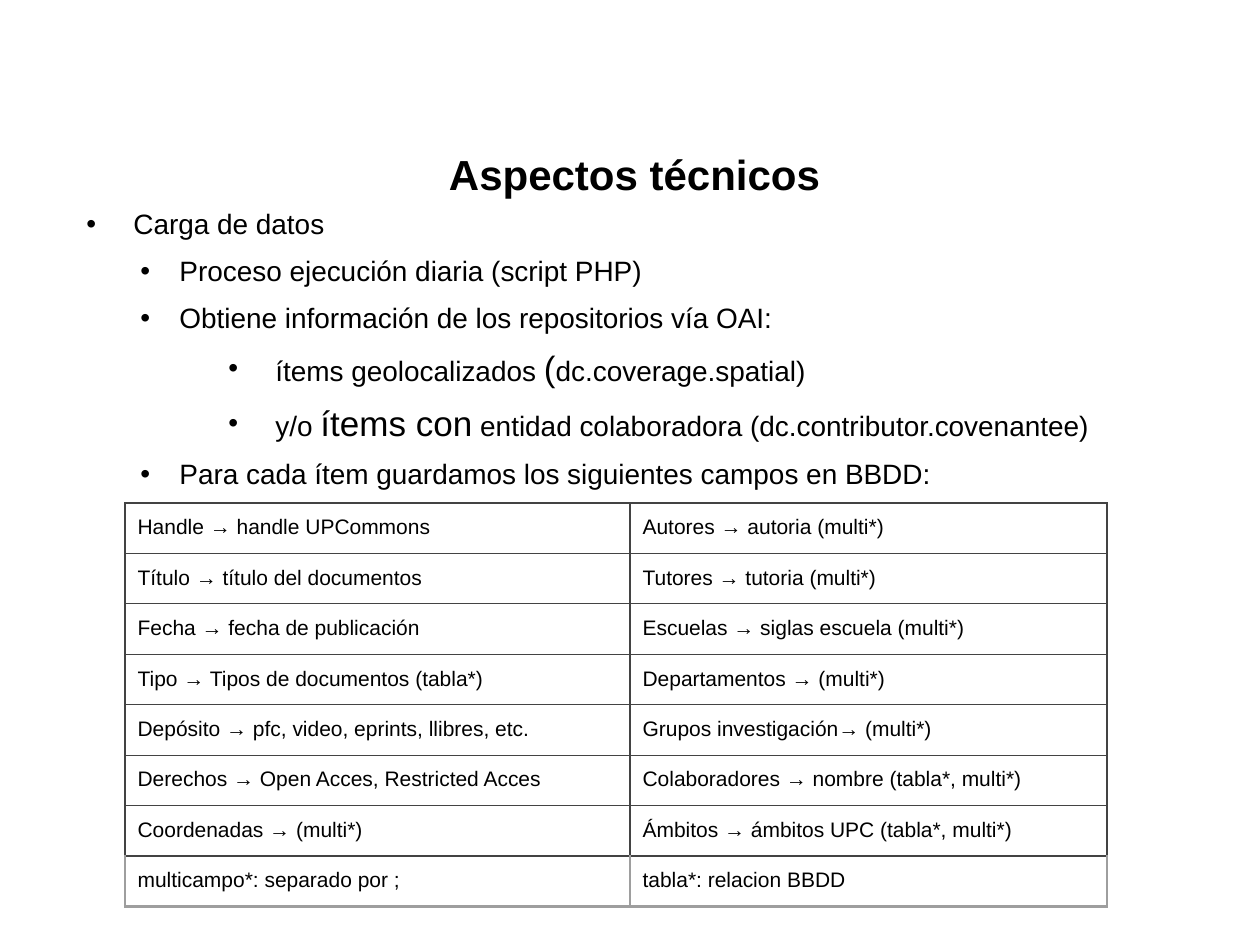
import dataclasses

import lxml.etree
import pptx
import pptx.dml.color
import pptx.enum.text
import pptx.oxml.ns
import pptx.util

ALIGN = pptx.enum.text.PP_ALIGN
ANCHOR = pptx.enum.text.MSO_ANCHOR
EMU_PER_PX = 914400 / 126


@dataclasses.dataclass(frozen=True)
class Theme:
    font: str = "Arial"
    text: str = "000000"
    border: str = "434343"
    note_border: str = "9E9E9E"
    title_size: int = 24
    emphasis_size: int = 20
    body_size: int = 16
    table_size: int = 12
    thin: float = 0.75
    thick: float = 1.5


THEME = Theme()
LEVELS = [(47, -47), (93, -39), (189, -47)]
BULLETS = [
    (0, ["Carga de datos"]),
    (1, ["Proceso ejecución diaria (script PHP)"]),
    (1, ["Obtiene información de los repositorios vía OAI:"]),
    (2, ["ítems geolocalizados ", "(", "dc.coverage.spatial)"]),
    (2, ["y/o ", "ítems con", " entidad colaboradora (dc.contributor.covenantee)"]),
    (1, ["Para cada ítem guardamos los siguientes campos en BBDD:"]),
]
FIELDS = [
    ("Handle → handle UPCommons", "Autores → autoria (multi*)"),
    ("Título → título del documentos", "Tutores → tutoria (multi*)"),
    ("Fecha → fecha de publicación", "Escuelas → siglas escuela (multi*)"),
    ("Tipo → Tipos de documentos (tabla*)", "Departamentos → (multi*)"),
    ("Depósito → pfc, video, eprints, llibres, etc.", "Grupos investigación→ (multi*)"),
    ("Derechos → Open Acces, Restricted Acces", "Colaboradores → nombre (tabla*, multi*)"),
    ("Coordenadas → (multi*)", "Ámbitos → ámbitos UPC (tabla*, multi*)"),
    ("multicampo*: separado por ;", "tabla*: relacion BBDD"),
]


def px(length):
    return pptx.util.Emu(round(length * EMU_PER_PX))


def add_element(parent, tag, **attributes):
    element = lxml.etree.SubElement(parent, pptx.oxml.ns.qn(tag))
    for name, value in attributes.items():
        element.set(name, str(value))
    return element


def add_text(paragraph, text, size, bold=False, color=THEME.text, align=None):
    if align is not None:
        paragraph.alignment = align
    run = paragraph.add_run()
    run.text = text
    run.font.name = THEME.font
    run.font.size = pptx.util.Pt(size)
    run.font.bold = bold
    run.font.color.rgb = pptx.dml.color.RGBColor.from_string(color)


class SlideBuilder:
    def __init__(self, slide, theme):
        self.slide = slide
        self.theme = theme

    def text_frame(self, left, top, width, height, anchor):
        shape = self.slide.shapes.add_textbox(px(left), px(top), px(width), px(height))
        frame = shape.text_frame
        frame.word_wrap = True
        frame.vertical_anchor = anchor
        return frame

    def title(self, text, *box):
        frame = self.text_frame(*box, ANCHOR.BOTTOM)
        add_text(frame.paragraphs[0], text, self.theme.title_size, bold=True, align=ALIGN.CENTER)

    def bullets(self, items, *box):
        frame = self.text_frame(*box, ANCHOR.TOP)
        for index, (level, texts) in enumerate(items):
            paragraph = frame.add_paragraph() if index else frame.paragraphs[0]
            paragraph.level = level
            paragraph.line_spacing = 0.9
            paragraph.space_before = pptx.util.Pt(9.6 if index else 0)
            properties = paragraph._p.get_or_add_pPr()
            margin, indent = LEVELS[level]
            properties.set("marL", str(px(margin)))
            properties.set("indent", str(px(indent)))
            bullet_color = add_element(properties, "a:buClr")
            add_element(bullet_color, "a:srgbClr", val=self.theme.text)
            add_element(properties, "a:buFont", typeface=self.theme.font)
            add_element(properties, "a:buChar", char="•")
            for position, text in enumerate(texts):
                emphasised = position == 1
                size = self.theme.emphasis_size if emphasised else self.theme.body_size
                add_text(paragraph, text, size)

    def borders(self, cell, **sides):
        properties = cell._tc.get_or_add_tcPr()
        for side in "LRTB":
            color, width = sides[side]
            line = add_element(properties, f"a:ln{side}", w=pptx.util.Pt(width))
            fill = add_element(line, "a:solidFill")
            add_element(fill, "a:srgbClr", val=color)

    def table(self, rows, left, top, column_widths, row_height):
        shape = self.slide.shapes.add_table(
            len(rows), len(column_widths), px(left), px(top),
            px(sum(column_widths)), px(row_height * len(rows)))
        table = shape.table
        table.first_row = table.horz_banding = False
        for column, width in zip(table.columns, column_widths):
            column.width = px(width)
        thin = (self.theme.border, self.theme.thin)
        divider = (self.theme.border, self.theme.thick)
        note = (self.theme.note_border, self.theme.thick)
        last = len(rows) - 1
        for row_index, texts in enumerate(rows):
            table.rows[row_index].height = px(row_height)
            side = note if row_index == last else thin
            above = divider if row_index == last else thin
            below = {last: note, last - 1: divider}.get(row_index, thin)
            for column_index, text in enumerate(texts):
                cell = table.cell(row_index, column_index)
                cell.margin_left = cell.margin_right = pptx.util.Inches(0.1)
                cell.margin_top = cell.margin_bottom = pptx.util.Inches(0.1)
                self.borders(cell, L=side, R=side, T=above, B=below)
                cell.fill.background()
                add_text(cell.text_frame.paragraphs[0], text, self.theme.table_size, align=ALIGN.LEFT)


def main():
    presentation = pptx.Presentation()
    presentation.slide_width = px(1260)
    presentation.slide_height = px(945)
    slide = presentation.slides.add_slide(presentation.slide_layouts[6])
    builder = SlideBuilder(slide, THEME)
    builder.title("Aspectos técnicos", 84, 116, 1101, 89)
    builder.bullets(BULLETS, 74, 204, 1153, 725)
    builder.table(FIELDS, 125, 503, [505, 477], 48)
    presentation.save("out.pptx")


if __name__ == "__main__":
    main()
